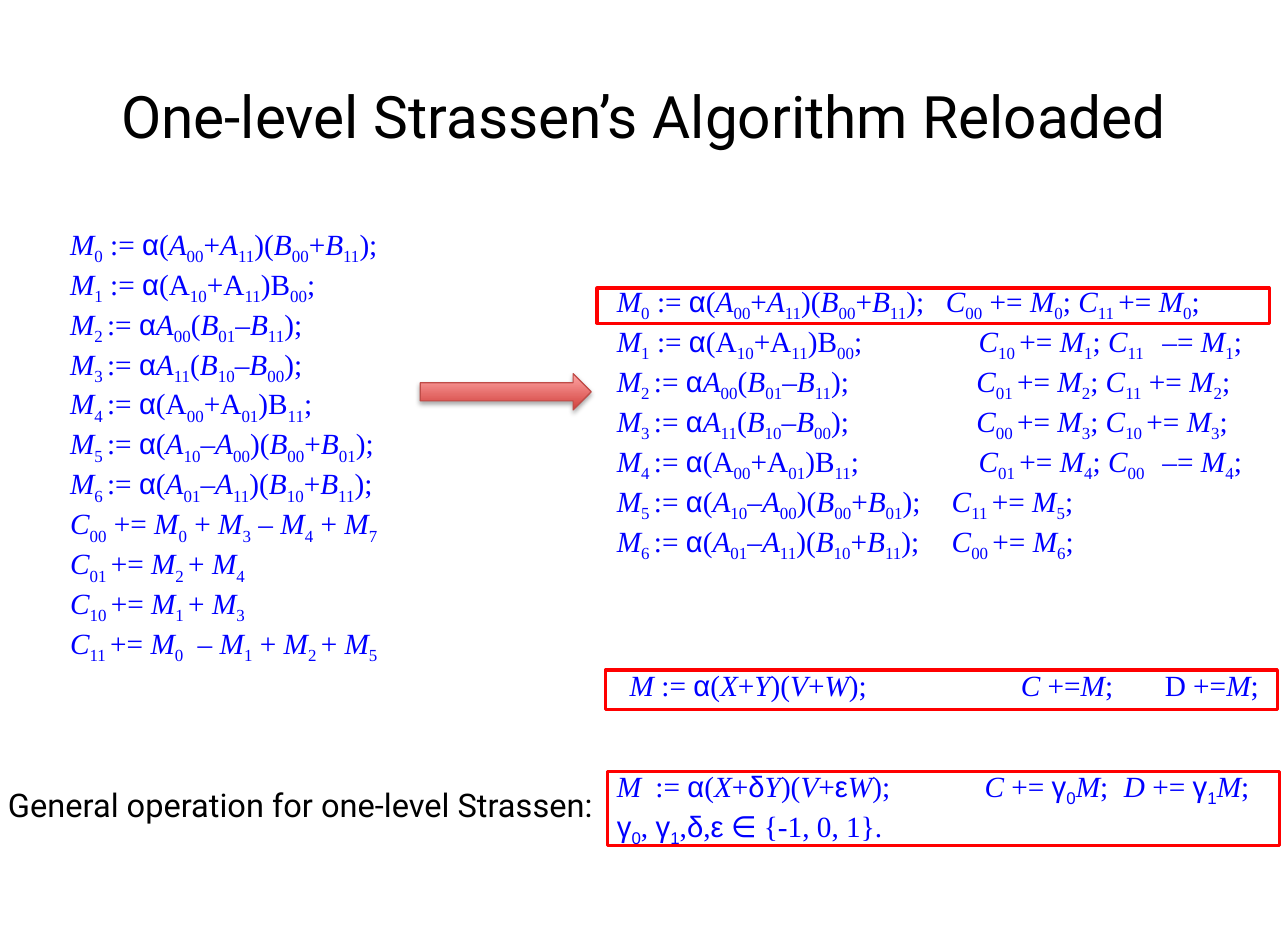
from itertools import groupby

from lxml.etree import SubElement as Sub
from pptx import Presentation
from pptx.dml.color import RGBColor
from pptx.enum.shapes import MSO_SHAPE as Shape
from pptx.enum.text import MSO_ANCHOR as Anchor, PP_ALIGN as Align
from pptx.oxml.ns import qn
from pptx.util import Inches, Pt

BLACK = RGBColor(0, 0, 0)
BLUE = RGBColor(0, 0, 255)
RED = RGBColor(255, 0, 0)
DARK = RGBColor(0xD1, 0x40, 0x3C)
LIGHT = RGBColor(0xFF, 0xA6, 0xA5)
EDGE = RGBColor(0xBF, 0x4C, 0x48)

PRODS = [
    "M[0] := α(A[00]+A[11])(B[00]+B[11]);",
    "M[1] := α(^A[10]+^A[11])^B[00];",
    "M[2 ]:= αA[00](B[01]–B[11]);",
    "M[3 ]:= αA[11](B[10]–B[00]);",
    "M[4 ]:= α(^A[00]+^A[01])^B[11];",
    "M[5 ]:= α(A[10]–A[00])(B[00]+B[01]);",
    "M[6 ]:= α(A[01]–A[11])(B[10]+B[11]);",
]
SUMS = [
    ("C[00] += M[0] + M[3] – M[4] + M[7]", ()),
    ("C[01 ]+= M[2 ]+ M[4]", ()),
    ("C[10 ]+= M[1 ]+ M[3]", ()),
    ("C[11 ]+= M[0]\t– M[1] + M[2 ]+ M[5]", (1.09,)),
]
ADDS = [
    ("C[00] += M[0]; C[11 ]+= M[0];", (2.81,)),
    ("C[10 ]+= M[1]; C[11]\t–= M[1];", (3.09, 4.66)),
    ("C[01 ]+= M[2]; C[11] += M[2];", (3.07,)),
    ("C[00 ]+= M[3]; C[10 ]+= M[3];", (3.07,)),
    ("C[01 ]+= M[4]; C[00]\t–= M[4];", (3.09, 4.66)),
    ("C[11 ]+= M[5];", (2.86,)),
    ("C[00 ]+= M[6];", (2.86,)),
]
SIMPLE = [("M := α(X+Y)(V+W);\tC +=M;\t^D +=M;", (3.34, 4.57))]
GENERAL = [
    ("M\t:= α(X+δY)(V+εW);\tC += γ[0]M;\tD += γ[1]M;", (0.33, 3.14, 4.33)),
    ("γ[0], γ[1],δ,ε ∈ {-1, 0, 1}.", ()),
]


def scan(line):
    """Yield each letter with its font, slant and subscript flag; [] lowers, ^ keeps upright."""
    low = up = False
    face = "Times New Roman"
    for char in line:
        if char in "[]":
            low = char == "["
        elif char == "^":
            up = True
        else:
            if not low:
                greek = "α" <= char <= "ω"
                face = "Arial" if greek else "Calibri" if char == "∈" else "Times New Roman"
            yield char, (face, "A" <= char <= "Z" and not up, low)
            up = False


def add_run(para, text, face, size, color, slant=False, low=False):
    """Add one styled run to a paragraph."""
    run = para.add_run()
    run.text = text
    font = run.font
    font.name, font.size, font.italic = face, Pt(size), slant
    font.color.rgb = color
    if low:
        run._r.get_or_add_rPr().set("baseline", "-25000")


def add_box(slide, left, top, width, height):
    """Add a wrapping text box and return its frame."""
    box = slide.shapes.add_textbox(*map(Inches, (left, top, width, height)))
    box.text_frame.word_wrap = True
    return box.text_frame


def add_label(slide, area, text, size):
    """Add a plain black line of text."""
    frame = add_box(slide, *area)
    add_run(frame.paragraphs[0], text, "Roboto", size, BLACK)
    return frame


def add_math(slide, area, lines):
    """Add formula lines, each with its own tab stops."""
    frame = add_box(slide, *area)
    for num, (line, stops) in enumerate(lines):
        para = frame.add_paragraph() if num else frame.paragraphs[0]
        if stops:
            tabs = Sub(para._p.get_or_add_pPr(), qn("a:tabLst"))
            for stop in stops:
                Sub(tabs, qn("a:tab"), pos=str(Inches(stop)), algn="l")
        for (face, slant, low), group in groupby(scan(line), lambda pair: pair[1]):
            text = "".join(char for char, _ in group)
            add_run(para, text, face, 18, BLUE, slant, low)


def add_shape(slide, kind, area, color, width):
    """Add an outlined preset shape without a theme shadow."""
    shape = slide.shapes.add_shape(kind, *map(Inches, area))
    shape.shadow.inherit = False
    shape.line.color.rgb = color
    shape.line.width = Pt(width)
    return shape


def add_frame(slide, left, top, height):
    """Add a hollow red frame around a formula."""
    add_shape(slide, Shape.RECTANGLE, (left, top, 5.74, height), RED, 2).fill.background()


def add_arrow(slide, area):
    """Add the red gradient arrow with its soft shadow."""
    arrow = add_shape(slide, Shape.RIGHT_ARROW, area, EDGE, 0.75)
    arrow.fill.gradient()
    arrow.fill.gradient_angle = 90
    for stop, color in zip(arrow.fill.gradient_stops, (DARK, LIGHT)):
        stop.color.rgb = color
    glow = Sub(arrow._element.spPr.find(qn("a:effectLst")), qn("a:outerShdw"),
               blurRad=str(Pt(3.1)), dist=str(Pt(1.8)), dir="5400000", rotWithShape="0")
    tint = Sub(glow, qn("a:srgbClr"), val="000000")
    Sub(tint, qn("a:alpha"), val="35000")


def main():
    """Build and save the slide."""
    deck = Presentation()
    deck.slide_width, deck.slide_height = Inches(11), Inches(8)
    slide = deck.slides.add_slide(deck.slide_layouts[6])

    title = add_label(slide, (0.55, 0.32, 9.9, 1.33), "One-level Strassen’s Algorithm Reloaded", 36)
    title.vertical_anchor = Anchor.MIDDLE
    title.paragraphs[0].alignment = Align.CENTER

    add_math(slide, (0.5, 1.88, 3.37, 4.75), [(prod, ()) for prod in PRODS] + SUMS)
    merged = [(f"{prod}\t{add}", stops) for prod, (add, stops) in zip(PRODS, ADDS)]
    add_math(slide, (5.17, 2.37, 5.83, 2.5), merged)
    add_math(slide, (5.28, 5.65, 5.7, 0.4), SIMPLE)
    add_arrow(slide, (3.59, 3.19, 1.46, 0.31))
    add_frame(slide, 5.1, 2.46, 0.3)
    add_math(slide, (5.17, 6.51, 5.83, 0.71), GENERAL)
    add_frame(slide, 5.17, 5.72, 0.34)
    add_label(slide, (-0.03, 6.65, 5.76, 0.44), "General operation for one-level Strassen:", 20)
    add_frame(slide, 5.19, 6.59, 0.63)
    deck.save("out.pptx")


if __name__ == "__main__":
    main()
